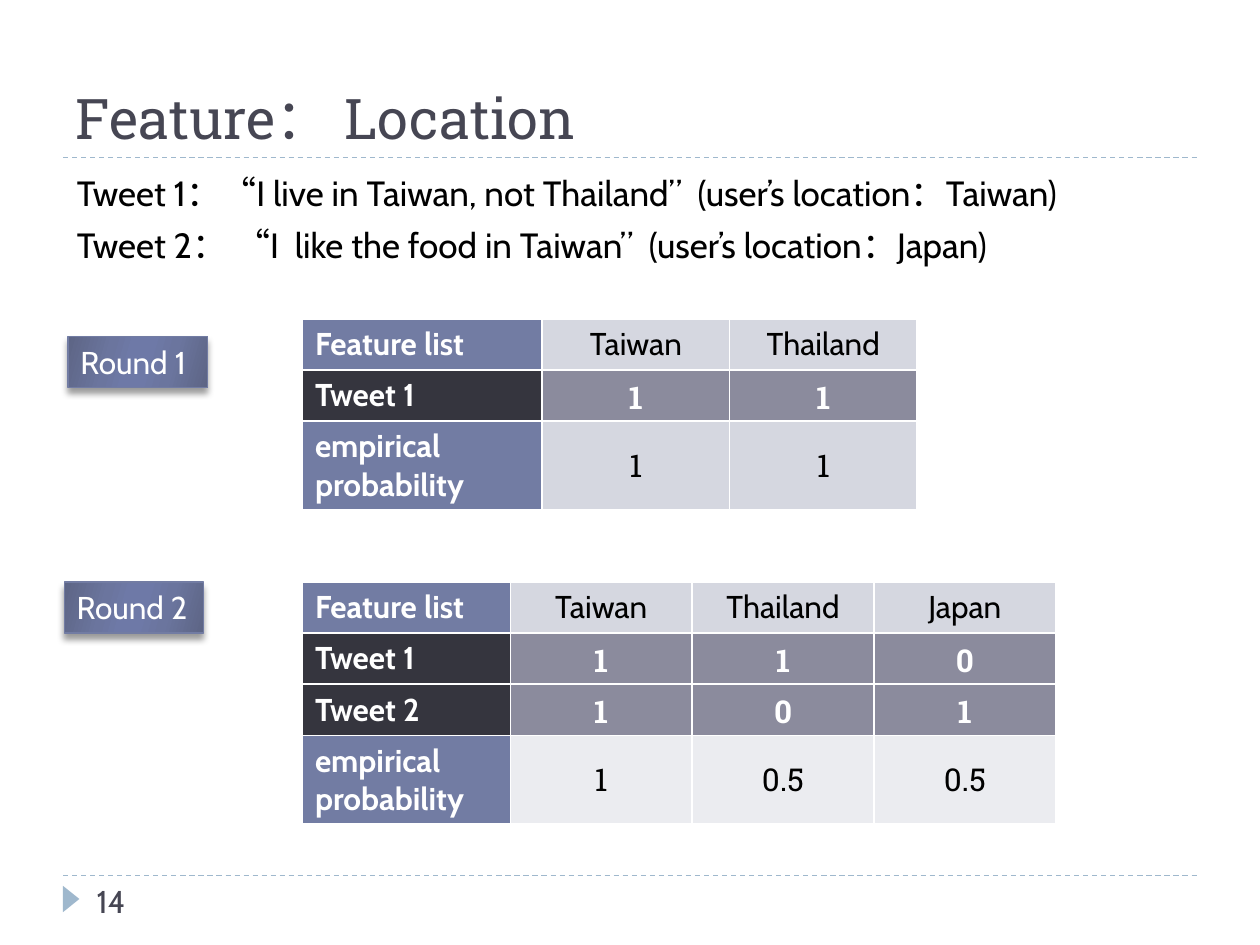
from pptx import Presentation
from pptx.dml.color import RGBColor
from pptx.enum.dml import MSO_LINE
from pptx.enum.shapes import MSO_CONNECTOR, MSO_SHAPE
from pptx.enum.text import MSO_ANCHOR, MSO_AUTO_SIZE, PP_ALIGN
from pptx.oxml.ns import qn
from pptx.util import Pt
from lxml import etree

CENTER, LEFT = PP_ALIGN.CENTER, PP_ALIGN.LEFT
TOP, MIDDLE, BOTTOM = MSO_ANCHOR.TOP, MSO_ANCHOR.MIDDLE, MSO_ANCHOR.BOTTOM
NO_AUTOFIT = MSO_AUTO_SIZE.NONE
DASH = MSO_LINE.DASH
STRAIGHT = MSO_CONNECTOR.STRAIGHT
RECTANGLE, TRIANGLE = MSO_SHAPE.RECTANGLE, MSO_SHAPE.ISOSCELES_TRIANGLE

SANS, SLAB = "Cabin", "Roboto Slab"
WHITE, BLACK, SLATE, PALE_BLUE = "FFFFFF", "000000", "464653", "9FB8CD"
BLUE, DARK, GREY, LIGHT, LIGHTER = "727CA3", "35353E", "8B8B9D", "D5D7E0", "EBECF0"


def rgb(color):
    return RGBColor.from_string(color)


def format_text(frame, size, font, color, bold=False, align=LEFT, anchor=TOP):
    frame.vertical_anchor = anchor
    for para in frame.paragraphs:
        para.alignment = align
        for span in para.runs:
            span.font.size = Pt(size)
            span.font.name = font
            span.font.bold = bold
            span.font.color.rgb = rgb(color)


deck = Presentation()
deck.slide_width, deck.slide_height = Pt(720), Pt(540)
page = deck.slides.add_slide(deck.slide_layouts[1])
title, body = page.placeholders[0], page.placeholders[1]

# Dashed rules above the footer and below the title
for y in (500.4, 90):
    rule = page.shapes.add_connector(STRAIGHT, Pt(36), Pt(y), Pt(684), Pt(y))
    rule.line.color.rgb = rgb(PALE_BLUE)
    rule.line.width = Pt(0.75)
    rule.line.dash_style = DASH
    etree.SubElement(rule._element.spPr, qn("a:effectLst"))

# Page number with its marker
marker = page.shapes.add_shape(TRIANGLE, Pt(33.1), Pt(509), Pt(15.1), Pt(9.4))
marker.rotation = 90
marker.shadow.inherit = False
marker.fill.solid()
marker.fill.fore_color.rgb = rgb(PALE_BLUE)
marker.line.fill.background()

number = page.shapes.add_textbox(Pt(48.2), Pt(500.4), Pt(156), Pt(29))
number.text_frame.word_wrap = True
number.text_frame.text = "14"
format_text(number.text_frame, 18, SANS, SLATE)

# Title
title.left, title.top, title.width, title.height = Pt(36), Pt(12), Pt(648), Pt(78)
title.text_frame.text = "Feature： Location"
title.text_frame.auto_size = NO_AUTOFIT
format_text(title.text_frame, 32, SLAB, SLATE, anchor=BOTTOM)

# Example tweets
body.left, body.top, body.width, body.height = Pt(36.7), Pt(94.3), Pt(648), Pt(62.6)
body.text_frame.text = (
    "Tweet 1：“I live in Taiwan, not Thailand”  (user’s location：Taiwan)\n"
    "Tweet 2： “I  like the food in Taiwan”  (user’s location：Japan)"
)
body.text_frame.auto_size = NO_AUTOFIT
for index, para in enumerate(body.text_frame.paragraphs):
    para.space_before = Pt(6 * index)
    properties = para._p.get_or_add_pPr()
    properties.set("marL", "0")
    properties.set("indent", "0")
    etree.SubElement(properties, qn("a:buNone"))
format_text(body.text_frame, 20, SANS, BLACK)

# Round labels
GRADIENT = [(0, "5D6585"), (30, "6B759E"), (45, "6E79A7"),
            (55, "6E79A7"), (73, "6B759E"), (100, "5D6585")]
for text, left, top in (("Round 1", 38.9, 192.2), ("Round 2", 36.7, 332.6)):
    label = page.shapes.add_shape(RECTANGLE, Pt(left), Pt(top), Pt(79.5), Pt(29.1))
    label.fill.gradient()
    label.fill.gradient_angle = 344
    label.line.color.rgb = rgb(BLUE)
    label.line.width = Pt(0.75)
    stops = label._element.spPr.find(".//" + qn("a:gsLst"))
    for stop in list(stops):
        stops.remove(stop)
    for position, color in GRADIENT:
        stop = etree.SubElement(stops, qn("a:gs"), pos=str(position * 1000))
        etree.SubElement(stop, qn("a:srgbClr"), val=color)

    label.shadow.inherit = False
    effects = label._element.spPr.find(qn("a:effectLst"))
    shadow = etree.SubElement(effects, qn("a:outerShdw"), blurRad=str(Pt(4)),
                              dist=str(Pt(3.4)), dir="5400000", rotWithShape="0")
    tint = etree.SubElement(shadow, qn("a:srgbClr"), val=BLACK)
    etree.SubElement(tint, qn("a:alpha"), val="40000")

    label.text_frame.word_wrap = False
    label.text_frame.text = text
    format_text(label.text_frame, 18, SANS, WHITE)

# Feature tables: top, first column, other columns, last row fill, rows
TABLES = [
    (182.2, 137, 107.1, LIGHT,
     [["Feature list", "Taiwan", "Thailand"],
      ["Tweet 1", "1", "1"],
      ["empirical probability", "1", "1"]]),
    (332.6, 118.8, 103.9, LIGHTER,
     [["Feature list", "Taiwan", "Thailand", "Japan"],
      ["Tweet 1", "1", "1", "0"],
      ["Tweet 2", "1", "0", "1"],
      ["empirical probability", "1", "0.5", "0.5"]]),
]
ROW_HEIGHT, LAST_ROW_HEIGHT = 29.2, 50.3
for top, first_width, other_width, last_fill, rows in TABLES:
    last, column_count = len(rows) - 1, len(rows[0])
    width = first_width + other_width * (column_count - 1)
    height = ROW_HEIGHT * last + LAST_ROW_HEIGHT
    table = page.shapes.add_table(len(rows), column_count, Pt(172.8), Pt(top),
                                  Pt(width), Pt(height)).table
    table.first_row = table.horz_banding = False
    for index, column in enumerate(table.columns):
        column.width = Pt(other_width if index else first_width)
    for r, values in enumerate(rows):
        table.rows[r].height = Pt(LAST_ROW_HEIGHT if r == last else ROW_HEIGHT)
        is_tweet = 0 < r < last
        for c, value in enumerate(values):
            cell = table.cell(r, c)
            cell.text = value
            if c == 0:
                fill = DARK if is_tweet else BLUE
            elif is_tweet:
                fill = GREY
            else:
                fill = last_fill if r == last else LIGHT
            cell.fill.solid()
            cell.fill.fore_color.rgb = rgb(fill)
            strong = c == 0 or is_tweet
            format_text(cell.text_frame, 18, SLAB if r and c else SANS,
                        WHITE if strong else BLACK, strong, CENTER if c else LEFT)
            cell.vertical_anchor = MIDDLE

deck.save("out.pptx")
